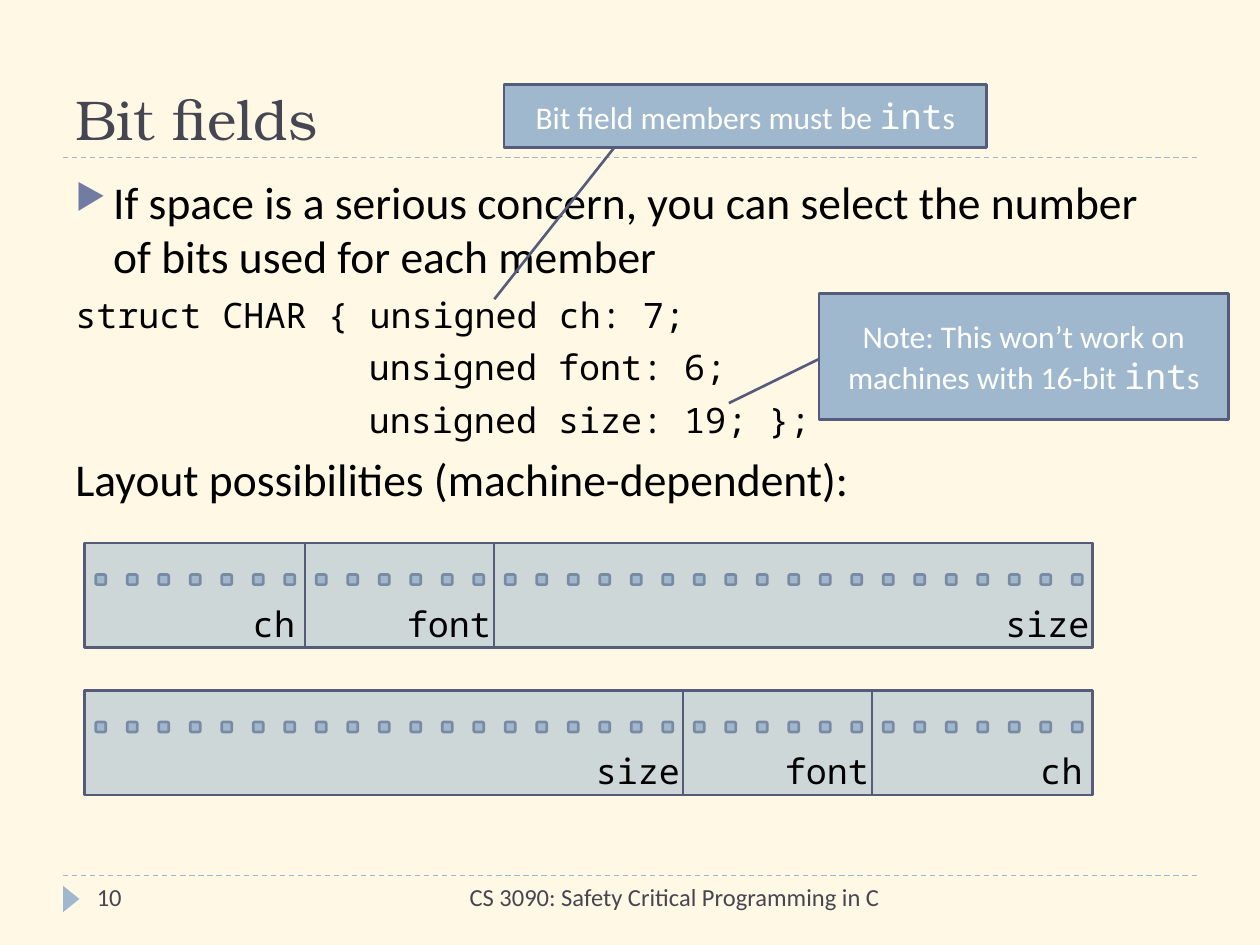
import pptx
import pptx.dml.color
import pptx.enum.dml
import pptx.enum.shapes
import pptx.enum.text
import pptx.oxml.ns
import pptx.util
from lxml import etree
from pptx.util import Inches

SHAPE = pptx.enum.shapes.MSO_SHAPE
ALIGN = pptx.enum.text.PP_ALIGN
ANCHOR = pptx.enum.text.MSO_ANCHOR
SERIF, SANS, MONO = "TeX Gyre Bonum", "Calibri", "Noto Sans Mono"
CREAM, BLUE, NAVY, SLATE = "FEF8E4", "9FB8CD", "545C79", "464653"
BULLET, BLACK, WHITE = "727CA3", "000000", "FFFFFF"
BIT = 0.25
BITS = {"ch": 7, "font": 6, "size": 19}


def color(value):
    return pptx.dml.color.RGBColor.from_string(value)


def add_xml(parent, tag, **attributes):
    return etree.SubElement(parent, pptx.oxml.ns.qn(tag), attributes)


def add_span(para, text, size, font, ink):
    span = para.add_run()
    span.text = text
    span.font.size = pptx.util.Pt(size)
    span.font.name = font
    span.font.color.rgb = color(ink)


def add_text_box(page, left, top, width, height, wrap=True, anchor=ANCHOR.TOP):
    box = page.shapes.add_textbox(Inches(left), Inches(top), Inches(width), Inches(height))
    box.text_frame.word_wrap = wrap
    box.text_frame.vertical_anchor = anchor
    return box.text_frame


def add_block(page, kind, left, top, width, height, outlined=True):
    block = page.shapes.add_shape(kind, Inches(left), Inches(top), Inches(width), Inches(height))
    block.shadow.inherit = False
    block.fill.solid()
    block.fill.fore_color.rgb = color(BLUE)
    if outlined:
        block.line.color.rgb = color(NAVY)
        block.line.width = pptx.util.Pt(1.5)
    else:
        block.line.fill.background()
    return block


def add_rule(page, left, top, width):
    rule = page.shapes.add_connector(
        pptx.enum.shapes.MSO_CONNECTOR.STRAIGHT,
        Inches(left), Inches(top), Inches(left + width), Inches(top))
    rule.line.color.rgb = color(BLUE)
    rule.line.width = pptx.util.Pt(0.75)
    rule.line.dash_style = pptx.enum.dml.MSO_LINE.DASH
    add_xml(rule._element.spPr, "a:effectLst")


def add_title(page, left, top, width, height):
    add_rule(page, left, top + height, width)
    frame = add_text_box(page, left, top, width, height, anchor=ANCHOR.BOTTOM)
    add_span(frame.paragraphs[0], "Bit fields", 32, SERIF, SLATE)


def add_footer(page, left, top, width):
    add_rule(page, left, top, width)
    marker = add_block(page, SHAPE.ISOSCELES_TRIANGLE, left - 0.04, top + 0.12, 0.21, 0.13, False)
    marker.rotation = 90
    course = add_text_box(page, left + 2.67, top, 3.91, 0.4).paragraphs[0]
    course.alignment = ALIGN.RIGHT
    add_span(course, "CS 3090: Safety Critical Programming in C", 14, SANS, SLATE)
    number = add_text_box(page, left + 0.17, top, 2.17, 0.4).paragraphs[0]
    add_span(number, "10", 14, SANS, SLATE)


def add_body(page, left, top, width, height):
    hanging, member_column = (0.3, -0.3), (2.33, 0)
    lines = [
        ("If space is a serious concern, you can select the number of bits used for each member",
         26, SANS, hanging),
        ("struct CHAR { unsigned ch: 7;", 20, MONO, hanging),
        ("unsigned font: 6;", 20, MONO, member_column),
        ("unsigned size: 19; };", 20, MONO, member_column),
        ("Layout possibilities (machine-dependent):", 26, SANS, hanging),
    ]
    frame = add_text_box(page, left, top, width, height)
    for index, (text, size, font, (margin, indent)) in enumerate(lines):
        para = frame.add_paragraph() if index else frame.paragraphs[0]
        para.space_before = pptx.util.Pt(6)
        add_span(para, text, size, font, BLACK)
        properties = para._p.get_or_add_pPr()
        properties.set("marL", str(Inches(margin)))
        properties.set("indent", str(Inches(indent)))
        if index == 0:
            add_xml(add_xml(properties, "a:buClr"), "a:srgbClr", val=BULLET)
            add_xml(properties, "a:buSzPct", val="76000")
            add_xml(properties, "a:buChar", char="▶")
        else:
            add_xml(properties, "a:buNone")


def add_field(page, name, left, top, width, height):
    """Draw one see-through member box with its name at the lower right."""
    field = add_block(page, SHAPE.RECTANGLE, left, top, width, height)
    add_xml(field.fill._xPr.find(".//" + pptx.oxml.ns.qn("a:srgbClr")), "a:alpha", val="50000")
    label_width = 0.2 + 0.17 * len(name)
    overhang = 0.03 if name == "ch" else 0.09
    frame = add_text_box(page, left + width + overhang - label_width, top + 0.42,
                         label_width, 0.44, wrap=False)
    add_span(frame.paragraphs[0], name, 20, MONO, BLACK)


def add_word_layout(page, names, left, top, height):
    """Draw a 32-bit word as a row of bits covered by its members in order."""
    for bit in range(sum(BITS.values())):
        add_block(page, SHAPE.ROUNDED_RECTANGLE, left + 0.09 + bit * BIT, top + 0.25, 0.08, 0.08)
    for name in names:
        width = BITS[name] * BIT
        add_field(page, name, left, top, width, height)
        left += width


def add_callout(page, text, pointer, left, top, width, height):
    """Draw a note ending in "ints"; pointer holds y, x of both line ends as shares of the box."""
    callout = add_block(page, SHAPE.LINE_CALLOUT_1, left, top, width, height)
    for index, share in enumerate(pointer):
        callout.adjustments[index] = share
    frame = callout.text_frame
    frame.word_wrap = True
    frame.vertical_anchor = ANCHOR.MIDDLE
    para = frame.paragraphs[0]
    para.alignment = ALIGN.CENTER
    for words, size, font in ((text, 18, SANS), ("int", 20, MONO), ("s", 18, SANS)):
        add_span(para, words, size, font, WHITE)


def main():
    deck = pptx.Presentation()
    deck.slide_width, deck.slide_height = Inches(10), Inches(7.5)
    page = deck.slides.add_slide(deck.slide_layouts[6])
    page.background.fill.solid()
    page.background.fill.fore_color.rgb = color(CREAM)

    add_title(page, 0.5, 0.17, 9, 1.08)
    add_footer(page, 0.5, 6.95, 9)
    add_body(page, 0.5, 1.33, 9, 5.4)
    add_word_layout(page, ("ch", "font", "size"), 0.67, 4.31, 0.83)
    add_word_layout(page, ("size", "font", "ch"), 0.67, 5.48, 0.83)
    add_callout(page, "Note: This won’t work on machines with 16-bit ",
                (0.52, 0, 0.87, -0.22), 6.5, 2.33, 3.25, 1)
    add_callout(page, "Bit field members must be ",
                (0.99, 0.23, 3.41, -0.02), 4, 0.67, 3.83, 0.5)
    deck.save("out.pptx")


if __name__ == "__main__":
    main()
